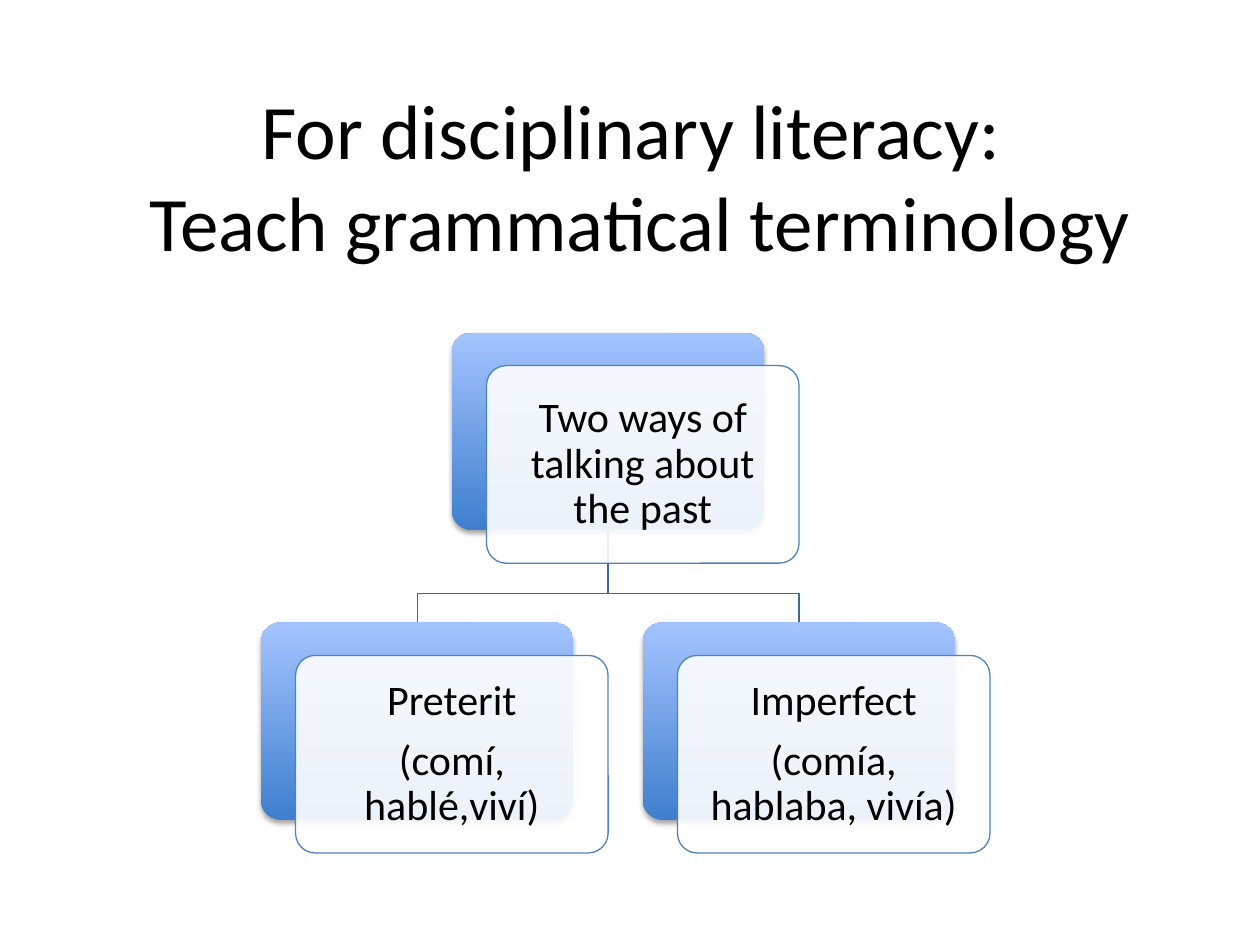
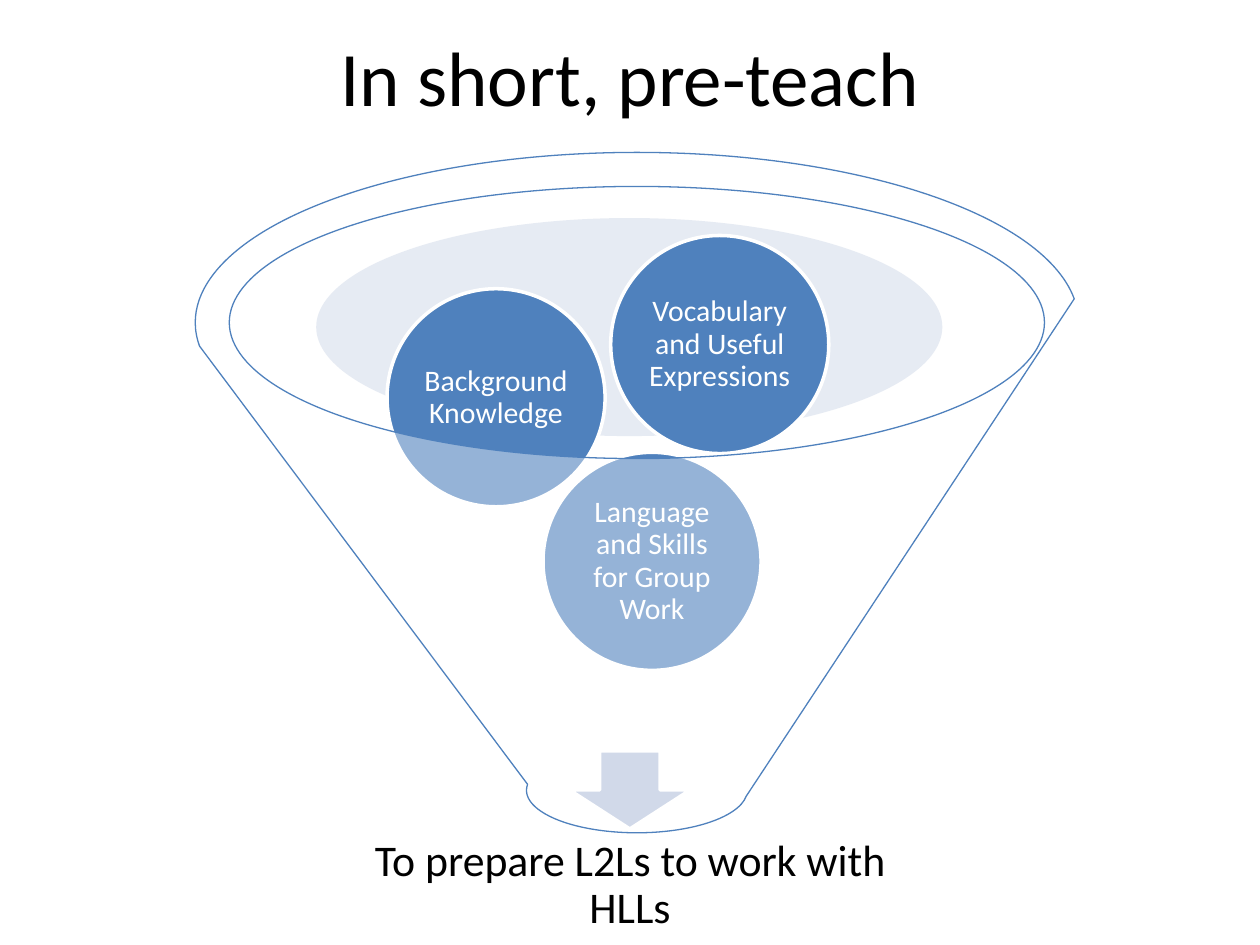
from typing import NamedTuple

from lxml import etree
from pptx import Presentation
from pptx.dml.color import RGBColor
from pptx.enum import shapes, text
from pptx.oxml import ns
from pptx.util import Pt

BLACK = RGBColor(0x00, 0x00, 0x00)
WHITE = RGBColor(0xFF, 0xFF, 0xFF)
BLUE = RGBColor(0x4F, 0x81, 0xBD)
DARK_BLUE = RGBColor(0x3F, 0x67, 0x97)
CARD_BOTTOM = RGBColor(0x3F, 0x7F, 0xCE)
CARD_TOP = RGBColor(0xA4, 0xC4, 0xFF)
PALE_BLUE = RGBColor(0xC2, 0xCD, 0xE1)
ARROW_BLUE = RGBColor(0xB3, 0xC1, 0xDB)

FONT = "Calibri"
TITLE_SIZE = 44
SHAPE = shapes.MSO_SHAPE

CARD_W, CARD_H = 178.6, 112.9
CARD_SHIFT_X, CARD_SHIFT_Y = 19.8, 18.8
ROOT_TOP, CHILD_TOP, BEND_Y = 190.1, 355.7, 339.1
CHILD_LEFTS = (149.1, 367.3)
ROOT_LEFT = sum(CHILD_LEFTS) / 2
BALL_SIZE = 124.6


class Box(NamedTuple):
    left: float
    top: float
    width: float
    height: float

    def lengths(self) -> tuple:
        return tuple(Pt(v) for v in self)


class Card(NamedTuple):
    left: float
    top: float
    lines: tuple


class Ball(NamedTuple):
    left: float
    top: float
    label: str


CARDS = (
    Card(ROOT_LEFT, ROOT_TOP, ("Two ways of talking about the past",)),
    Card(CHILD_LEFTS[0], CHILD_TOP, ("Preterit", "(comí, hablé,viví)")),
    Card(CHILD_LEFTS[1], CHILD_TOP, ("Imperfect", "(comía, hablaba, vivía)")),
)
BALLS = (
    Ball(310.3, 258.5, "Language and Skills for Group Work"),
    Ball(221.2, 165, "Background Knowledge"),
    Ball(349, 134.6, "Vocabulary and Useful Expressions"),
)


def set_alpha(sp, percent: int) -> None:
    """Make the solid fill of a shape partly transparent."""
    color = sp._element.spPr.find(ns.qn("a:solidFill"))[0]
    etree.SubElement(color, ns.qn("a:alpha"), val=str(percent * 1000))


def add_card_shadow(sp) -> None:
    effects = sp._element.spPr.find(ns.qn("a:effectLst"))
    shadow = etree.SubElement(
        effects, ns.qn("a:outerShdw"), blurRad=str(Pt(3.1)), dist=str(Pt(1.8)),
        dir="5400000", rotWithShape="0")
    color = etree.SubElement(shadow, ns.qn("a:srgbClr"), val=str(BLACK))
    etree.SubElement(color, ns.qn("a:alpha"), val="35000")


def add_shape(s, kind, box: Box, fill=None, line=None, line_width=0.75, alpha=100):
    sp = s.shapes.add_shape(kind, *box.lengths())
    sp.shadow.inherit = False
    if fill is not None:
        sp.fill.solid()
        sp.fill.fore_color.rgb = fill
        if alpha < 100:
            set_alpha(sp, alpha)
    if line is None:
        sp.line.fill.background()
    else:
        sp.line.color.rgb = line
        sp.line.width = Pt(line_width)
    return sp


def write(sp, lines: tuple, size: float, color=BLACK, inset=None, diagram=True) -> None:
    """Write centred paragraphs; diagram text has tight lines and gaps after."""
    tf = sp.text_frame
    tf.word_wrap = True
    tf.vertical_anchor = text.MSO_ANCHOR.MIDDLE
    if inset is not None:
        tf.margin_left = tf.margin_right = Pt(inset)
        tf.margin_top = tf.margin_bottom = Pt(inset)
    for i, line in enumerate(lines):
        p = tf.add_paragraph() if i else tf.paragraphs[0]
        p.text = line
        p.alignment = text.PP_ALIGN.CENTER
        p.font.name = FONT
        p.font.size = Pt(size)
        p.font.color.rgb = color
        if diagram:
            p.line_spacing = 0.9
            p.space_after = Pt(round(size * 0.35, 1))


def add_title(s, title: str, box: Box) -> None:
    write(s.shapes.add_textbox(*box.lengths()), (title,), TITLE_SIZE, diagram=False)


def add_branch(s, child_left: float) -> None:
    """Draw the bent line from the root card down to a child card."""
    root_x, child_x = ROOT_LEFT + CARD_W / 2, child_left + CARD_W / 2
    fb = s.shapes.build_freeform(Pt(root_x), Pt(ROOT_TOP + CARD_H))
    bends = ((root_x, BEND_Y), (child_x, BEND_Y), (child_x, CHILD_TOP))
    fb.add_line_segments([(Pt(x), Pt(y)) for x, y in bends], close=False)
    sp = fb.convert_to_shape()
    sp.shadow.inherit = False
    sp.fill.background()
    sp.line.color.rgb = DARK_BLUE
    sp.line.width = Pt(0.75)


def add_card(s, card: Card) -> None:
    back_box = Box(card.left, card.top, CARD_W, CARD_H)
    back = add_shape(s, SHAPE.ROUNDED_RECTANGLE, back_box)
    back.fill.gradient()
    back.fill.gradient_angle = 90
    for stop, color in zip(back.fill.gradient_stops, (CARD_BOTTOM, CARD_TOP)):
        stop.color.rgb = color
    back.fill.gradient_stops[0].position = 0
    back.fill.gradient_stops[1].position = 1
    add_card_shadow(back)

    front_box = back_box._replace(left=card.left + CARD_SHIFT_X,
                                  top=card.top + CARD_SHIFT_Y)
    front = add_shape(s, SHAPE.ROUNDED_RECTANGLE, front_box, WHITE, BLUE, alpha=90)
    write(front, card.lines, 24, inset=7.2)
    for sp in (back, front):
        sp.adjustments[0] = 0.1


def add_ball(s, ball: Ball) -> None:
    box = Box(ball.left, ball.top, BALL_SIZE, BALL_SIZE)
    sp = add_shape(s, SHAPE.OVAL, box, BLUE, WHITE, 2)
    write(sp, (ball.label,), 17, WHITE, inset=1.7)


def build_terminology_slide(s) -> None:
    add_title(s, "For disciplinary literacy: \vTeach grammatical terminology",
              Box(36, 21.6, 659.5, 156.2))
    for left in reversed(CHILD_LEFTS):
        add_branch(s, left)
    for card in CARDS:
        add_card(s, card)


def build_funnel_slide(s) -> None:
    add_title(s, "In short, pre-teach", Box(36, 8.6, 648, 69.8))
    add_shape(s, SHAPE.OVAL, Box(180.7, 124.6, 357.8, 124.6), PALE_BLUE, alpha=40)
    add_shape(s, SHAPE.DOWN_ARROW, Box(325.4, 429.1, 69.1, 44.6), ARROW_BLUE, WHITE, 2)
    goal = s.shapes.add_textbox(*Box(193.7, 464.4, 332.6, 83.5).lengths())
    write(goal, ("To prepare L2Ls to work with HLLs",), 25, inset=13.7)
    for ball in BALLS:
        add_ball(s, ball)
    add_shape(s, SHAPE.FUNNEL, Box(111.6, 87.1, 504.7, 388.8), WHITE, BLUE, alpha=40)


def main() -> None:
    prs = Presentation()
    prs.slide_width, prs.slide_height = Pt(720), Pt(540)
    blank = prs.slide_layouts[6]
    for build in (build_terminology_slide, build_funnel_slide):
        build(prs.slides.add_slide(blank))
    prs.save("out.pptx")


if __name__ == "__main__":
    main()
